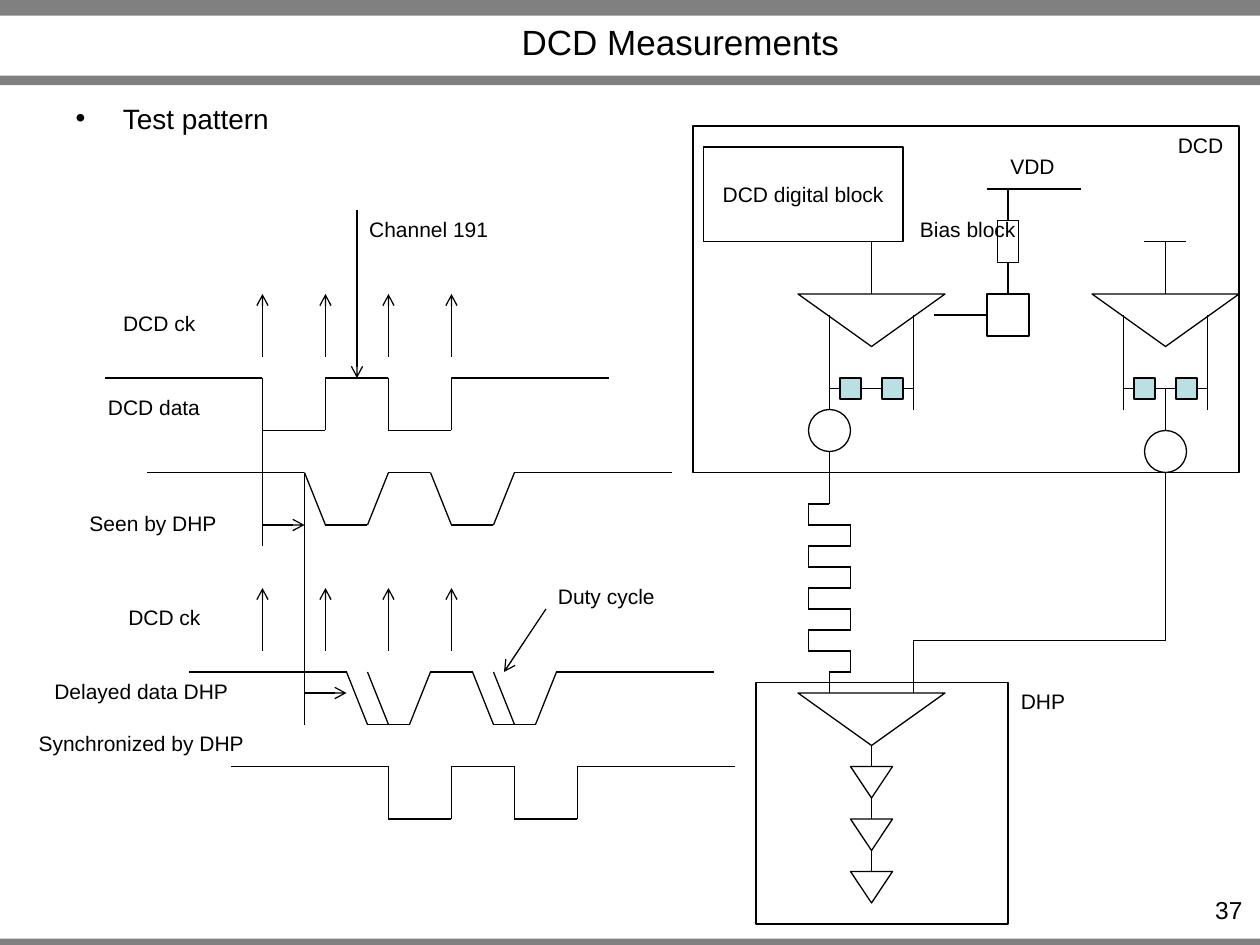
from itertools import accumulate, pairwise
from typing import NamedTuple

import pptx
import pptx.dml.color
import pptx.enum.shapes
import pptx.enum.text
import pptx.util
from lxml import etree
from pptx.oxml.ns import qn

Pt = pptx.util.Pt
RGBColor = pptx.dml.color.RGBColor
Kind = pptx.enum.shapes.MSO_SHAPE
Align = pptx.enum.text.PP_ALIGN
Anchor = pptx.enum.text.MSO_ANCHOR
AutoSize = pptx.enum.text.MSO_AUTO_SIZE

BLACK = RGBColor(0x00, 0x00, 0x00)
GRAY = RGBColor(0x80, 0x80, 0x80)
TERMINATION = RGBColor(0xBB, 0xE0, 0xE3)
LABEL_HEIGHT = 21.6
LABEL_FRAME = {"word_wrap": False, "auto_size": AutoSize.SHAPE_TO_FIT_TEXT,
               "margin_left": Pt(0), "margin_right": Pt(0)}
RECEIVER_PITCH = 168


class Box(NamedTuple):
    left: float
    top: float
    width: float
    height: float
    kind: Kind = Kind.RECTANGLE
    fill: RGBColor | None = None
    outlined: bool = True


class Wire(NamedTuple):
    points: list[tuple[float, float]]
    arrow: bool = False


class Label(NamedTuple):
    text: str
    left: float
    top: float
    width: float


def draw_box(shapes, box: Box):
    shape = shapes.add_shape(box.kind, *map(Pt, box[:4]))
    shape.shadow.inherit = False
    if box.kind == Kind.ISOSCELES_TRIANGLE:
        shape.rotation = 180
    if box.fill is None:
        shape.fill.background()
    else:
        shape.fill.solid()
        shape.fill.fore_color.rgb = box.fill
    if box.outlined:
        shape.line.color.rgb = BLACK
        shape.line.width = Pt(0.75)
    else:
        shape.line.fill.background()
    return shape


def draw_wire(shapes, wire: Wire) -> None:
    """Draw one straight connector for each leg of the wire."""
    for start, end in pairwise(wire.points):
        leg = shapes.add_connector(
            pptx.enum.shapes.MSO_CONNECTOR.STRAIGHT, *map(Pt, (*start, *end)))
        leg.line.color.rgb = BLACK
        leg.line.width = Pt(0.75)
        if wire.arrow:
            etree.SubElement(leg.line._get_or_add_ln(), qn("a:tailEnd"), type="arrow")
        etree.SubElement(leg._element.spPr, qn("a:effectLst"))


def write(frame, text: str, size: float, align: Align) -> None:
    paragraph = frame.paragraphs[0]
    paragraph.text = text
    paragraph.alignment = align
    paragraph.font.color.rgb = BLACK
    for name, value in {"name": "Arial", "size": Pt(size)}.items():
        setattr(paragraph.font, name, value)


def draw_label(shapes, label: Label) -> None:
    caption = shapes.add_textbox(
        *map(Pt, (label.left, label.top, label.width, LABEL_HEIGHT)))
    for name, value in LABEL_FRAME.items():
        setattr(caption.text_frame, name, value)
    write(caption.text_frame, label.text, 12, Align.CENTER)


def place(placeholder, left: float, top: float, width: float, height: float) -> None:
    area = {"left": left, "top": top, "width": width, "height": height}
    for name, value in area.items():
        setattr(placeholder, name, Pt(value))
    placeholder.text_frame.auto_size = AutoSize.NONE


def waveform(left: float, top: float, ramp: float = 0) -> Wire:
    """Two low pulses, 30 deep, whose edges take `ramp` points."""
    flat = 36 - ramp
    steps = [90, ramp, flat, ramp, flat, ramp, flat, ramp, 90]
    low = top + 30
    heights = [top, top, low, low, top, top, low, low, top, top]
    return Wire(list(zip(accumulate(steps, initial=left), heights)))


def clock(top: float) -> list[Wire]:
    return [Wire([(x, top + 36), (x, top)], True) for x in range(150, 259, 36)]


def receiver_boxes(left: float) -> list[Box]:
    return [Box(left, 168, 84, 30, Kind.ISOSCELES_TRIANGLE),
            *(Box(left + dx, 216, 12, 12, fill=TERMINATION) for dx in (24, 48))]


def receiver_wires(left: float) -> list[Wire]:
    return [Wire([(left + 42, 138), (left + 42, 168)]),
            Wire([(left + 18, 222), (left + 66, 222)]),
            *(Wire([(left + dx, 180), (left + dx, 234)]) for dx in (18, 66))]


def delay_line() -> Wire:
    turns = [point for y in range(288, 384, 24)
             for point in ((462, y), (462, y + 12), (486, y + 12), (486, y + 24))]
    return Wire([(474, 258), (474, 288), *turns, (474, 384), (474, 396)])


BARS = [Box(0, top, 720, height, fill=GRAY, outlined=False)
        for top, height in ((536.4, 5.4), (0, 9), (43.2, 5.4))]
RECEIVERS = [456, 456 + RECEIVER_PITCH]
BUFFER_TOPS = range(438, 499, 30)

WIRES = [
    waveform(60, 216), waveform(84, 270, 12),
    waveform(108, 384, 12), waveform(132, 438),
    *clock(168), *clock(336),
    Wire([(150, 300), (174, 300)], True),
    Wire([(174, 396), (198, 396)], True),
    Wire([(150, 246), (150, 312)]),
    Wire([(174, 270), (174, 414)]),
    Wire([(204, 120), (204, 216)], True),
    *(Wire([(x, 384), (x + 12, 414)]) for x in (210, 282)),
    Wire([(312, 348), (288, 384)], True),
    *(wire for left in RECEIVERS for wire in receiver_wires(left)),
    Wire([(576, 150), (576, 168)]),
    Wire([(576, 108), (576, 126)]),
    Wire([(564, 180), (534, 180)]),
    Wire([(564, 108), (618, 108)]),
    Wire([(654, 138), (678, 138)]),
    Wire([(666, 222), (666, 246)]),
    Wire([(666, 270), (666, 366), (522, 366), (522, 396)]),
    delay_line(),
    *(Wire([(498, top - 12), (498, top)]) for top in BUFFER_TOPS),
]
BOXES = [
    *(box for left in RECEIVERS for box in receiver_boxes(left)),
    Box(570, 126, 12, 24), Box(564, 168, 24, 24),
    Box(462, 234, 24, 24, Kind.OVAL), Box(654, 246, 24, 24, Kind.OVAL),
    Box(456, 396, 84, 30, Kind.ISOSCELES_TRIANGLE),
    *(Box(486, top, 24, 18, Kind.ISOSCELES_TRIANGLE) for top in BUFFER_TOPS),
    Box(396, 72, 312, 198), Box(432, 390, 144, 138),
]
LABELS = [
    Label("DCD ck", 63, 174, 56), Label("DCD data", 54, 222, 68),
    Label("Seen by DHP", 43.5, 288, 88), Label("Delayed data DHP", 23.5, 384, 114.5),
    Label("Synchronized by DHP", 14.5, 414, 132.5), Label("VDD", 570, 84, 40),
    Label("Channel 191", 203.5, 120, 83), Label("DCD ck", 66, 342, 56),
    Label("Bias block", 518, 120, 70), Label("DCD", 666, 72, 40),
    Label("DHP", 576, 390, 40), Label("Duty cycle", 311.5, 330, 70),
]


def main() -> None:
    deck = pptx.Presentation()
    deck.slide_width, deck.slide_height = Pt(720), Pt(540)
    slide = deck.slides.add_slide(deck.slide_layouts[1])
    shapes = slide.shapes

    title, body = slide.placeholders
    place(title, 93.6, 10, 590.4, 27.5)
    title.text_frame.vertical_anchor = Anchor.MIDDLE
    write(title.text_frame, "DCD Measurements", 20, Align.CENTER)

    place(body, 36, 54.2, 648, 78)
    topic = body.text_frame.paragraphs[0]
    topic.space_before = Pt(0)
    properties = topic._p.get_or_add_pPr()
    properties.set("marL", str(Pt(27)))
    properties.set("indent", str(-Pt(27)))
    etree.SubElement(properties, qn("a:buChar"), char="•")
    write(body.text_frame, "Test pattern", 16, Align.LEFT)

    for bar in BARS:
        draw_box(shapes, bar)
    page_number = shapes.add_textbox(*map(Pt, (654.5, 507.8, 62.6, 17.3)))
    page_number.text_frame.word_wrap = True
    write(page_number.text_frame, "37", 14, Align.RIGHT)

    for wire in WIRES:
        draw_wire(shapes, wire)
    for box in BOXES:
        draw_box(shapes, box)
    digital_block = draw_box(shapes, Box(402, 84, 114, 54)).text_frame
    digital_block.vertical_anchor = Anchor.MIDDLE
    write(digital_block, "DCD digital block", 12, Align.CENTER)
    for label in LABELS:
        draw_label(shapes, label)

    deck.save("out.pptx")


if __name__ == "__main__":
    main()
